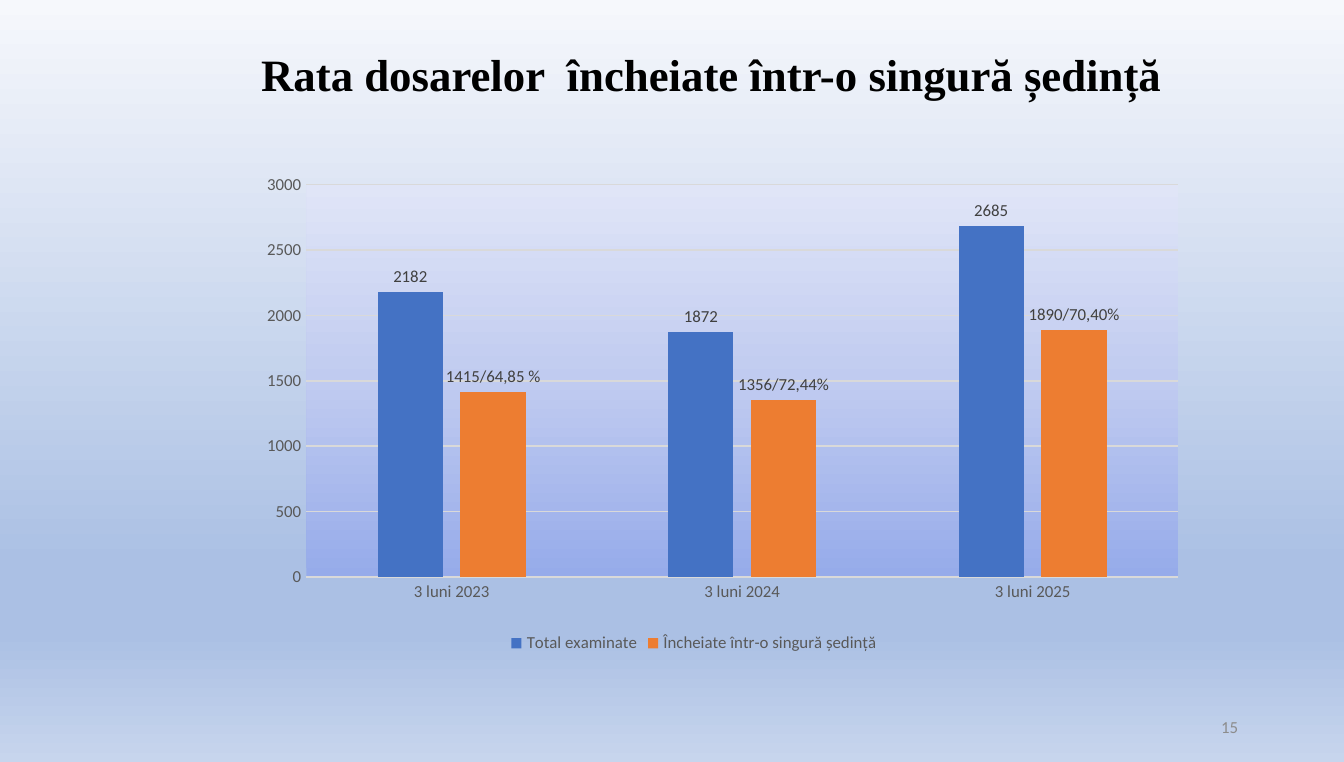
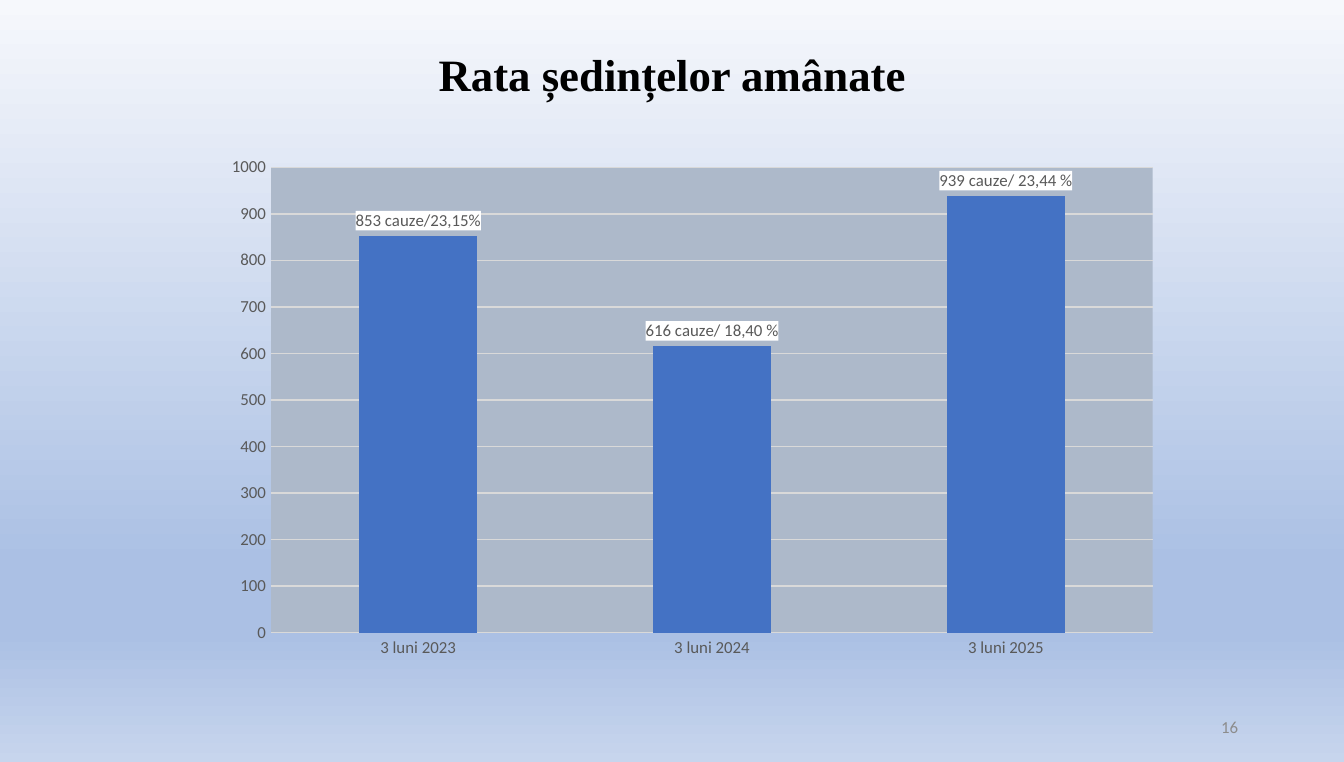
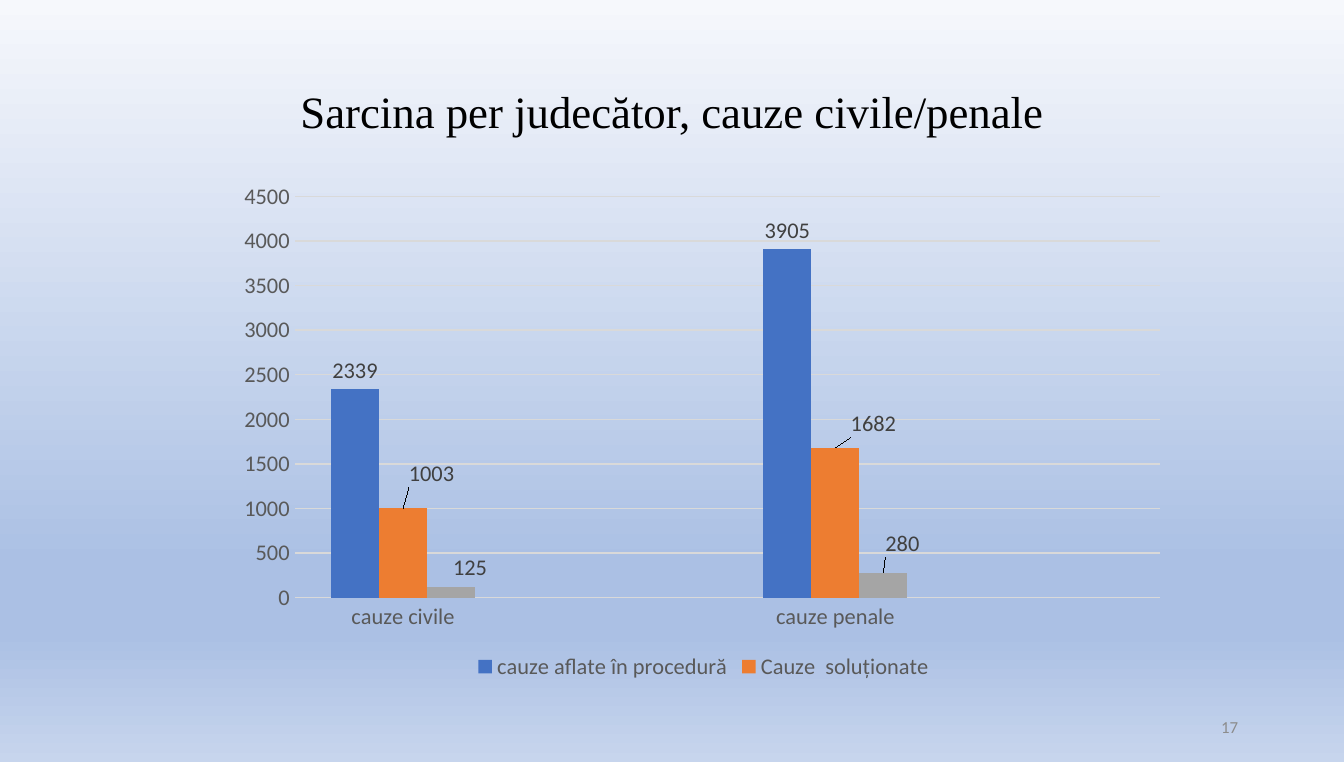
"""Build three slides of column charts on court case figures."""
from pptx import Presentation
from pptx.chart.data import CategoryChartData as ChartData
from pptx.dml.color import RGBColor
from pptx.enum.chart import XL_CHART_TYPE as Kind
from pptx.enum.chart import XL_LABEL_POSITION as Spot
from pptx.enum.chart import XL_LEGEND_POSITION as Side
from pptx.enum.chart import XL_TICK_MARK as Tick
from pptx.enum.text import MSO_ANCHOR as Anchor
from pptx.enum.text import PP_ALIGN as Align
from pptx.oxml import parse_xml
from pptx.oxml.ns import nsdecls, qn
from pptx.util import Inches, Pt

BLACK = RGBColor(0x00, 0x00, 0x00)
WHITE = RGBColor(0xFF, 0xFF, 0xFF)
DARK = RGBColor(0x40, 0x40, 0x40)
GREY = RGBColor(0x59, 0x59, 0x59)
PALE = RGBColor(0x8C, 0x8C, 0x8C)
RULE = RGBColor(0xD9, 0xD9, 0xD9)
SLATE = RGBColor(0xAD, 0xB9, 0xCA)
BLUE = RGBColor(0x44, 0x72, 0xC4)
ORANGE = RGBColor(0xED, 0x7D, 0x31)
SILVER = RGBColor(0xA5, 0xA5, 0xA5)
BARS = (BLUE, ORANGE, SILVER)
SKY = [(0, RGBColor(0xF6, 0xF8, 0xFC)), (74, RGBColor(0xAB, 0xC0, 0xE4)),
       (83, RGBColor(0xAB, 0xC0, 0xE4)), (100, RGBColor(0xC7, 0xD5, 0xED))]
HAZE = [(0, RGBColor(0x96, 0xAB, 0xEA)), (50, RGBColor(0xC0, 0xCB, 0xF0)),
        (100, RGBColor(0xE0, 0xE5, 0xF7))]
SERIF, SANS = "Times New Roman", "Calibri"


def style(font, size, color, face=SANS, bold=False):
    """Set the look of a font."""
    font.name, font.size, font.bold = face, Pt(size), bold
    font.color.rgb = color


def write(frame, text, align=Align.CENTER, gap=None, **look):
    """Put one formatted line of text into a frame."""
    para = frame.paragraphs[0]
    para.alignment, para.line_spacing = align, gap
    run = para.add_run()
    run.text = text
    style(run.font, **look)


def solid(color):
    """Return the XML of a plain fill."""
    return f'<a:solidFill><a:srgbClr val="{color}"/></a:solidFill>'


def blend(stops, angle):
    """Return the XML of a linear gradient."""
    marks = "".join(f'<a:gs pos="{at * 1000}"><a:srgbClr val="{color}"/></a:gs>'
                    for at, color in stops)
    return (f'<a:gradFill {nsdecls("a")} rotWithShape="1"><a:gsLst>{marks}</a:gsLst>'
            f'<a:lin ang="{angle * 60000}" scaled="0"/></a:gradFill>')


def props(fill):
    """Return shape properties that hold a fill."""
    return parse_xml(f'<c:spPr {nsdecls("c", "a")}>{fill}</c:spPr>')


def layout(mode="", **parts):
    """Return a manual chart layout."""
    body = "".join(f'<c:{key} val="{val}"/>' for key, val in parts.items())
    return parse_xml(f'<c:layout {nsdecls("c")}><c:manualLayout>{mode}{body}'
                     '</c:manualLayout></c:layout>')


class Deck:
    """Hold the shared style and the current slide."""

    def __init__(self):
        """Start an empty deck."""
        self.show = Presentation()
        self.show.slide_width, self.show.slide_height = Inches(10), Inches(5.67)
        self.page = 14

    def slide(self, title, bold=True, left=0.1, base=0.61):
        """Add a slide with sky, title and page number."""
        self.now = self.show.slides.add_slide(self.show.slide_layouts[6])
        self.now.background.fill.solid()
        plain = next(self.now.element.iter(qn("a:solidFill")))
        plain.getparent().replace(plain, parse_xml(blend(SKY, 90)))
        self.page += 1
        self.text((0.69, 0.3, 8.62, 1.1), title, left, base, gap=0.9,
                  size=24, color=BLACK, face=SERIF, bold=bold)
        self.text((7.06, 5.26, 2.25, 0.3), str(self.page), align=Align.RIGHT,
                  size=9, color=PALE)

    def text(self, box, words, left=0.1, base=0.05, **look):
        """Add a text box centred in height."""
        frame = self.now.shapes.add_textbox(*map(Inches, box)).text_frame
        frame.word_wrap, frame.vertical_anchor = True, Anchor.MIDDLE
        frame.margin_left, frame.margin_bottom = Inches(left), Inches(base)
        write(frame, words, **look)

    def chart(self, box, cats, rows, plot, top, step, gap, lap=0, size=9,
              ink=DARK, fill=None, line=None):
        """Add a column chart and return it."""
        data = ChartData()
        data.categories = cats
        for name, vals in rows:
            data.add_series(name, vals)
        chart = self.now.shapes.add_chart(
            Kind.COLUMN_CLUSTERED, *map(Inches, box), data).chart
        chart.has_title = chart.has_legend = False
        style(chart.font, 10, BLACK)
        bars = chart.plots[0]
        bars.gap_width, bars.overlap, bars.vary_by_categories = gap, lap, False
        for axis in (chart.category_axis, chart.value_axis):
            axis.major_tick_mark = axis.minor_tick_mark = Tick.NONE
            style(axis.tick_labels.font, size, GREY)
            axis.format.line.fill.background()
        if line:
            self.rule(chart.category_axis.format.line, line)
        axis = chart.value_axis
        axis.minimum_scale, axis.maximum_scale, axis.major_unit = 0, top, step
        self.rule(axis.major_gridlines.format.line, RULE)
        for row, color in zip(bars.series, BARS):
            row.format.fill.solid()
            row.format.fill.fore_color.rgb = color
            tags = row.data_labels
            tags.show_value, tags.position = True, Spot.OUTSIDE_END
            style(tags.font, size, ink)
        area = chart.element.find(".//" + qn("c:plotArea"))
        for old in area.findall(qn("c:layout")):
            area.remove(old)
        modes = ('<c:layoutTarget val="inner"/><c:xMode val="edge"/>'
                 '<c:yMode val="edge"/>')
        area.insert(0, layout(modes, **dict(zip("xywh", plot))))
        if fill:
            area.append(props(fill))
        return chart

    def rule(self, line, color):
        """Draw a thin chart line."""
        line.color.rgb, line.width = color, Pt(0.75)

    def legend(self, chart, size=9, hide=None):
        """Add a legend at the bottom, leaving out one entry if asked."""
        chart.has_legend = True
        key = chart.legend
        key.position, key.include_in_layout = Side.BOTTOM, False
        style(key.font, size, GREY)
        if hide is not None:
            entry = parse_xml(f'<c:legendEntry {nsdecls("c")}><c:idx val="{hide}"/>'
                              '<c:delete val="1"/></c:legendEntry>')
            chart.element.find(".//" + qn("c:legendPos")).addnext(entry)

    def tags(self, row, words, color, back=None):
        """Write a label of its own on each column."""
        for at, word in enumerate(words):
            tag = row.points[at].data_label
            write(tag.text_frame, word, size=9, color=color)
            tag.position = Spot.OUTSIDE_END
        if back:
            for text in row.data_labels._element.iter(qn("c:tx")):
                text.addnext(props(solid(back)))

    def nudge(self, row, moves):
        """Shift the labels of some columns."""
        for at, (right, down) in moves.items():
            tag = row.points[at].data_label
            style(tag.font, 12, DARK)
            tag.position = Spot.OUTSIDE_END
        for tag in row.data_labels._element.findall(qn("c:dLbl")):
            mark = tag.find(qn("c:idx"))
            right, down = moves[int(mark.get("val"))]
            mark.addnext(layout(x=right, y=down))


def main():
    """Build and save the deck."""
    deck = Deck()
    terms = [f"3 luni {year}" for year in (2023, 2024, 2025)]

    deck.slide("Rata dosarelor  încheiate într-o singură ședință", left=0.68)
    chart = deck.chart(
        (1.56, 1.11, 7.21, 3.79), terms,
        [("Total examinate", (2182, 1872, 2685)),
         ("Încheiate într-o singură ședință", (1415, 1356, 1890))],
        (0.1, 0.07, 0.9, 0.77), 3000, 500, 219, -27,
        fill=blend(HAZE, 270), line=RULE)
    deck.legend(chart)
    deck.tags(chart.plots[0].series[1],
              ("1415/64,85 %", "1356/72,44%", "1890/70,40%"), DARK)

    deck.slide("Rata ședințelor amânate")
    chart = deck.chart(
        (1.59, 1.09, 7.13, 3.89), terms, [("Series 1", (853, 616, 939))],
        (0.06, 0.04, 0.92, 0.89), 1000, 100, 150, ink=GREY, fill=solid(SLATE))
    deck.tags(chart.plots[0].series[0],
              ("853 cauze/23,15%", "616 cauze/ 18,40 %", "939 cauze/ 23,44 %"),
              GREY, WHITE)

    deck.slide("Sarcina per judecător, cauze civile/penale", bold=False, base=0.05)
    chart = deck.chart(
        (1.7, 1.27, 7.07, 3.83), ("cauze civile", "", "cauze penale", ""),
        [("cauze aflate în procedură", (2339, None, 3905, None)),
         ("Cauze  soluționate", (1003, None, 1682, None)),
         ("Series 3", (125, None, 280, None))],
        (0.07, 0.05, 0.91, 0.78), 4500, 500, 150, size=12)
    deck.legend(chart, 12, hide=2)
    rows = chart.plots[0].series
    deck.nudge(rows[1], {0: (0.03, -0.03), 2: (0.04, -0.01)})
    deck.nudge(rows[2], {0: (0.02, 0), 2: (0.02, -0.02)})

    deck.show.save("out.pptx")


if __name__ == "__main__":
    main()
